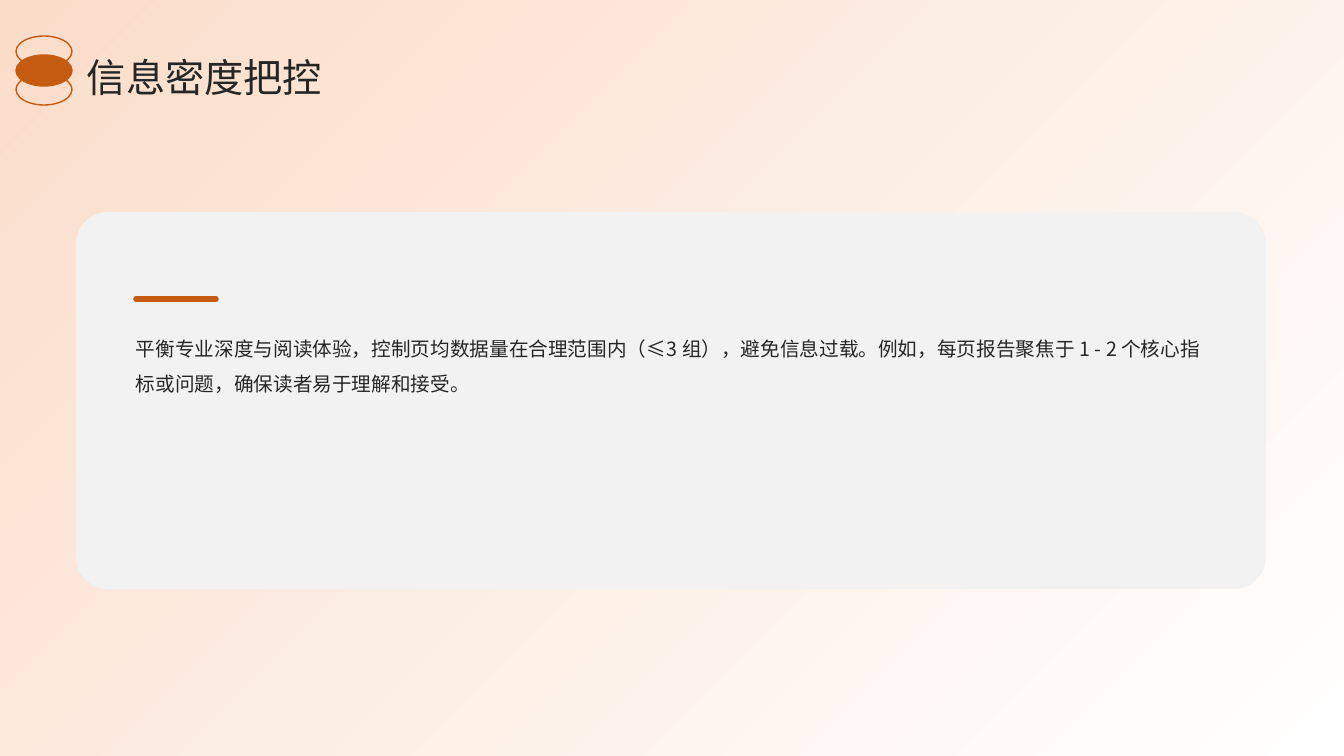
from lxml import etree
from pptx import Presentation
from pptx.dml.color import RGBColor
from pptx.enum.shapes import MSO_CONNECTOR, MSO_SHAPE
from pptx.enum.text import MSO_ANCHOR
from pptx.oxml.ns import qn
from pptx.util import Pt

RECT = MSO_SHAPE.RECTANGLE
ROUND = MSO_SHAPE.ROUNDED_RECTANGLE
OVAL = MSO_SHAPE.OVAL
STRAIGHT = MSO_CONNECTOR.STRAIGHT
TOP, MIDDLE = MSO_ANCHOR.TOP, MSO_ANCHOR.MIDDLE

WIDTH, HEIGHT = 1344, 756
SCALE = 914400 / 100.8
FONT = "Noto Sans CJK SC"
COLORS = {"white": "FFFFFF", "peach": "FADDC9", "card": "F2F2F2",
          "accent": "C55A11", "ink": "262626"}

TITLE = "信息密度把控"
BODY = ("平衡专业深度与阅读体验，控制页均数据量在合理范围内（≤3 组），避免信息过载。"
        "例如，每页报告聚焦于 1 - 2 个核心指标或问题，确保读者易于理解和接受。")


def emu(*sizes):
    return [round(size * SCALE) for size in sizes]


def color(name):
    return RGBColor.from_string(COLORS[name])


def add_box(slide, kind, box, fill=None, line=None):
    shape = slide.shapes.add_shape(kind, *emu(*box))
    shape.shadow.inherit = False
    if fill:
        shape.fill.solid()
        shape.fill.fore_color.rgb = color(fill)
    else:
        shape.fill.background()
    if line:
        shape.line.color.rgb = color(line)
        shape.line.width = Pt(1)
    else:
        shape.line.fill.background()
    return shape


def add_back(slide):
    back = add_box(slide, RECT, (0, 0, WIDTH, HEIGHT))
    back.fill.gradient()
    back.fill.gradient_angle = 135
    for stop, place, name in zip(back.fill.gradient_stops, (0, 1), ("white", "peach")):
        stop.position = place
        stop.color.rgb = color(name)


def add_rule(slide, left, right, top):
    rule = slide.shapes.add_connector(STRAIGHT, *emu(left, top, right, top))
    rule.line.color.rgb = color("accent")
    rule.line.width = Pt(4)
    rule.line._get_or_add_ln().set("cap", "rnd")
    etree.SubElement(rule._element.spPr, qn("a:effectLst"))


def add_text(slide, box, text, size, space, anchor):
    frame = slide.shapes.add_textbox(*emu(*box)).text_frame
    form = {"word_wrap": True, "vertical_anchor": anchor, "margin_left": 0,
            "margin_right": 0, "margin_top": 0, "margin_bottom": 0}
    for key, value in form.items():
        setattr(frame, key, value)
    para = frame.paragraphs[0]
    para.line_spacing = space
    run = para.add_run()
    run.text = text
    for key, value in {"size": Pt(size), "name": FONT}.items():
        setattr(run.font, key, value)
    run.font.color.rgb = color("ink")
    # East Asian typeface
    etree.SubElement(run.font._element, qn("a:ea"), typeface=FONT)


def add_badge(slide, left, top, step):
    # Stacked ovals, lowest first, with the middle one filled
    for row, fill in ((2, None), (1, "accent"), (0, None)):
        add_box(slide, OVAL, (left, top + row * step, 56, 31), fill, "accent")


def main():
    deck = Presentation()
    deck.slide_width, deck.slide_height = emu(WIDTH, HEIGHT)
    slide = deck.slides.add_slide(deck.slide_layouts[6])

    # Background and card
    add_back(slide)
    card = add_box(slide, ROUND, (76, 212, 1190, 377), "card")
    card.adjustments[0] = 0.085

    # Card content
    add_rule(slide, 136, 216, 299)
    add_text(slide, (136, 325, 1072, 218), BODY, 14, 1.5, TOP)

    # Heading
    add_text(slide, (87, 49, 1176, 51), TITLE, 28, 1.1, MIDDLE)
    add_badge(slide, 16, 36, 19)

    deck.save("out.pptx")


if __name__ == "__main__":
    main()
